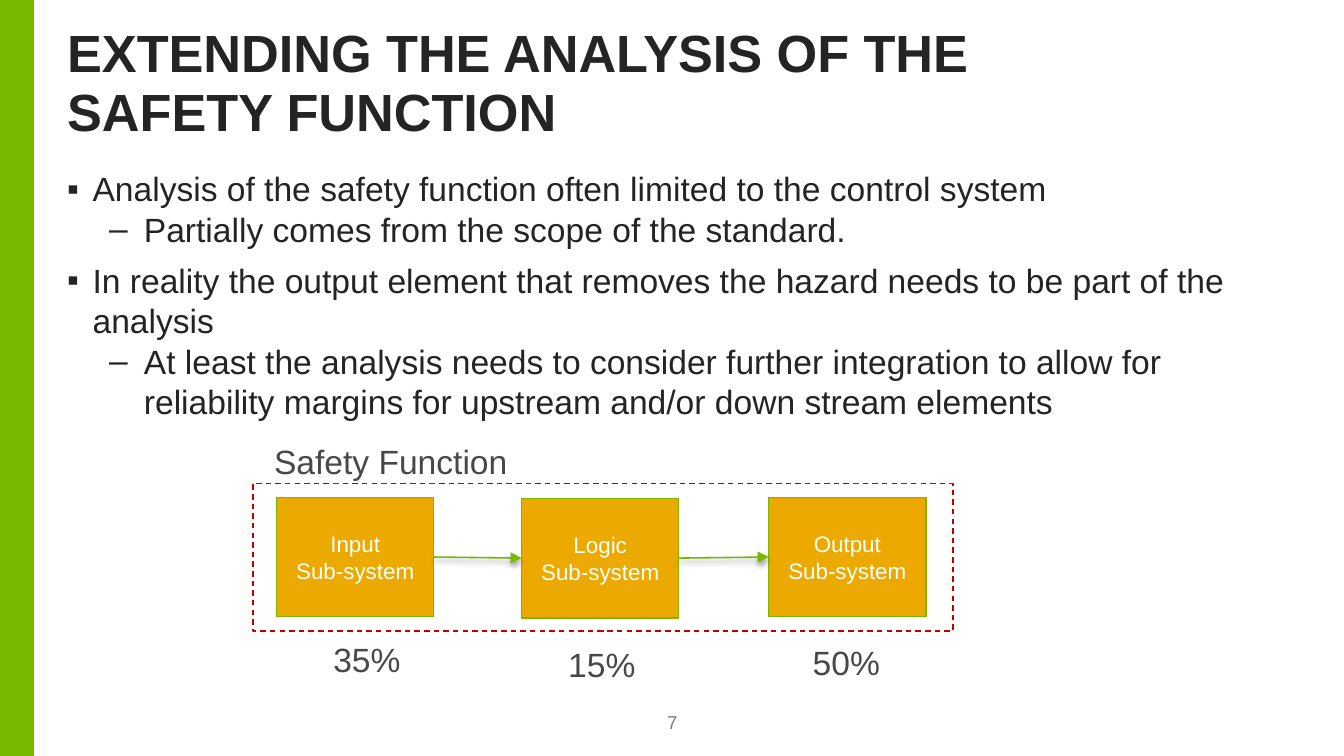
from copy import deepcopy
from dataclasses import dataclass

from lxml import etree
from pptx import Presentation
from pptx import util as u
from pptx.dml.color import RGBColor
from pptx.enum import dml, shapes, text
from pptx.oxml import ns


@dataclass(frozen=True)
class Theme:
    font: str = "Arial"
    green: str = "7AB800"
    amber: str = "ECAA00"
    red: str = "C00000"
    white: str = "FFFFFF"
    ink: str = "232425"
    label: str = "47484A"
    grey: str = "808080"
    shadow: str = "000000"
    title_size: int = 28
    body_size: int = 18
    box_size: int = 12
    number_size: int = 10


@dataclass(frozen=True)
class Box:
    """A rectangle in centimetres."""
    left: float
    top: float
    width: float
    height: float

    def inner(self, left, top, width, height):
        return Box(self.left + left, self.top + top, width, height)

    def lengths(self):
        return [u.Cm(value) for value in (self.left, self.top, self.width, self.height)]


THEME = Theme()
BULLETS = [("▪", 0.48, -0.48, 6), ("–", 1.45, -0.66, 0)]
POINTS = [
    (0, "Analysis of the safety function often limited to the control system"),
    (1, "Partially comes from the scope of the standard."),
    (0, "In reality the output element that removes the hazard needs to be part of the analysis"),
    (1, "At least the analysis needs to consider further integration to allow for "
        "reliability margins for upstream and/or down stream elements"),
]
# paragraphs, left, top, share, share left, share top
SUBSYSTEMS = [
    (["Input", "Sub-system"], 0.45, 1.2, "35%", 1.27, 3.74),
    (["Logic", "Sub-system"], 5.08, 1.22, "15%", 5.71, 3.84),
    (["Output\vSub-system"], 9.75, 1.2, "50%", 10.33, 3.81),
]


def rgb(colour):
    return RGBColor.from_string(colour)


def write_text(frame, paragraphs, *, size, colour, bold=False, align=text.PP_ALIGN.LEFT,
               anchor=text.MSO_ANCHOR.TOP, margins=(0.25, 0.13, 0.25, 0.13), wrap=True,
               spacing=None):
    frame.auto_size = text.MSO_AUTO_SIZE.NONE if wrap else text.MSO_AUTO_SIZE.SHAPE_TO_FIT_TEXT
    frame.word_wrap = wrap
    frame.vertical_anchor = anchor
    frame.margin_left, frame.margin_top, frame.margin_right, frame.margin_bottom = map(u.Cm, margins)
    for index, words in enumerate(paragraphs):
        paragraph = frame.paragraphs[0] if index == 0 else frame.add_paragraph()
        paragraph.text = words
        paragraph.alignment = align
        paragraph.line_spacing = spacing
        for run in paragraph.runs:
            run.font.name, run.font.size, run.font.bold = THEME.font, u.Pt(size), bold
            run.font.color.rgb = rgb(colour)
        for line_break in paragraph._p.findall(ns.qn("a:br")):
            line_break.append(deepcopy(paragraph.runs[0]._r.rPr))


def add_label(parent, box, words, **style):
    write_text(parent.add_textbox(*box.lengths()).text_frame, [words], **style)


def add_rectangle(parent, box, fill=None, line=None):
    rectangle = parent.add_shape(shapes.MSO_SHAPE.RECTANGLE, *box.lengths())
    rectangle.shadow.inherit = False
    if fill:
        rectangle.fill.solid()
        rectangle.fill.fore_color.rgb = rgb(fill)
    else:
        rectangle.fill.background()
    if line:
        rectangle.line.color.rgb = rgb(line)
        rectangle.line.width = u.Pt(0.75)
    else:
        rectangle.line.fill.background()
    return rectangle


def add_arrow(parent, source, target):
    """Join the right side of source to the left side of target."""
    arrow = parent.add_connector(shapes.MSO_CONNECTOR.STRAIGHT, 0, 0, 0, 0)
    arrow.begin_connect(source, 3)
    arrow.end_connect(target, 1)
    arrow.line.color.rgb = rgb(THEME.green)
    arrow.line.width = u.Pt(0.85)
    etree.SubElement(arrow.line._get_or_add_ln(), ns.qn("a:tailEnd"), type="triangle")
    effects = etree.SubElement(arrow._element.spPr, ns.qn("a:effectLst"))
    shadow = etree.SubElement(effects, ns.qn("a:outerShdw"), blurRad=str(u.Pt(3)),
                              dist=str(u.Pt(2)), dir="5400000", rotWithShape="0")
    colour = etree.SubElement(shadow, ns.qn("a:srgbClr"), val=THEME.shadow)
    etree.SubElement(colour, ns.qn("a:alpha"), val="40000")


def place(shape, box):
    shape.left, shape.top, shape.width, shape.height = box.lengths()


def fill_title(slide, box):
    title = slide.shapes.title
    place(title, box)
    write_text(title.text_frame, ["EXTENDING THE ANALYSIS OF THE \vSAFETY FUNCTION"],
               size=THEME.title_size, colour=THEME.ink, bold=True, spacing=0.95,
               anchor=text.MSO_ANCHOR.BOTTOM, margins=(0, 0, 0, 0))


def fill_body(slide, box):
    body = slide.placeholders[1]
    place(body, box)
    write_text(body.text_frame, [words for _, words in POINTS], size=THEME.body_size,
               colour=THEME.ink, margins=(0, 0, 0, 0.13))
    for index, (level, _) in enumerate(POINTS):
        mark, margin, indent, before = BULLETS[level]
        paragraph = body.text_frame.paragraphs[index]
        paragraph.level = level
        paragraph.space_before = u.Pt(before if index else 0)
        properties = paragraph._p.get_or_add_pPr()
        properties.set("marL", str(u.Cm(margin)))
        properties.set("indent", str(u.Cm(indent)))
        etree.SubElement(properties, ns.qn("a:buFont"), typeface=THEME.font)
        etree.SubElement(properties, ns.qn("a:buChar"), char=mark)


def draw_safety_function(slide, box):
    parent = slide.shapes.add_group_shape().shapes
    label_style = dict(size=THEME.body_size, colour=THEME.label, wrap=False)
    blocks = []
    for name, left, top, share, share_left, share_top in SUBSYSTEMS:
        block = add_rectangle(parent, box.inner(left, top, 2.97, 2.26), THEME.amber, THEME.green)
        write_text(block.text_frame, name, size=THEME.box_size, colour=THEME.white,
                   align=text.PP_ALIGN.CENTER, anchor=text.MSO_ANCHOR.MIDDLE)
        blocks.append(block)
        add_label(parent, box.inner(share_left, share_top, 1.8, 1.02), share, **label_style)
    for source, target in zip(blocks, blocks[1:]):
        add_arrow(parent, source, target)
    frame = add_rectangle(parent, box.inner(0, 0.94, box.width, 2.79), line=THEME.red)
    frame.line.dash_style = dml.MSO_LINE.DASH
    add_label(parent, box.inner(0.15, 0, 4.98, 1.02), "Safety Function", **label_style)


def add_page_number(slide, box):
    add_label(slide.shapes, box, "7", size=THEME.number_size, colour=THEME.grey,
              align=text.PP_ALIGN.CENTER, anchor=text.MSO_ANCHOR.BOTTOM, margins=(0, 0.13, 0, 0))


def main():
    presentation = Presentation()
    presentation.slide_width, presentation.slide_height = u.Cm(25.4), u.Cm(14.29)
    slide = presentation.slides.add_slide(presentation.slide_layouts[1])
    add_rectangle(slide.shapes, Box(0, 0, 0.64, 14.29), THEME.green)
    fill_title(slide, Box(1.27, 0.99, 23.27, 1.73))
    fill_body(slide, Box(1.27, 3.18, 23.27, 5.51))
    add_page_number(slide, Box(12.07, 13.49, 1.27, 0.38))
    draw_safety_function(slide, Box(4.78, 8.2, 13.23, 4.86))
    presentation.save("out.pptx")


if __name__ == "__main__":
    main()
